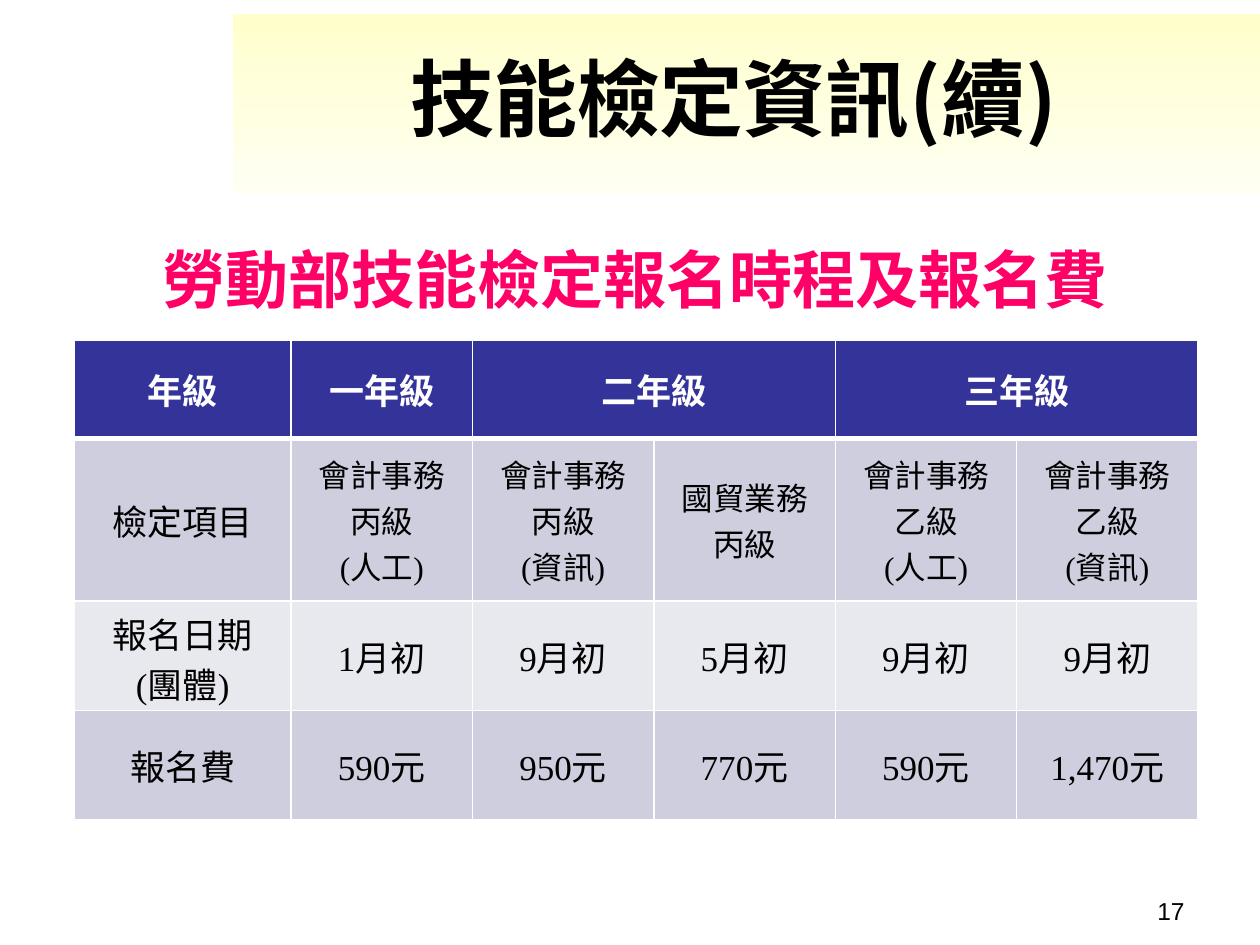
from lxml.etree import SubElement
from pptx import Presentation
from pptx.dml.color import RGBColor
from pptx.enum.shapes import MSO_SHAPE
from pptx.enum.text import MSO_ANCHOR, PP_ALIGN
from pptx.oxml.ns import qn
from pptx.util import Inches, Pt

COLORS = {
    "black": "000000", "white": "FFFFFF", "pink": "FF0066",
    "band_top": "FFFFCC", "band_bottom": "FFFFF3",
    "header": "333399", "row_dark": "CECEDE", "row_light": "E8E8EF",
}
CJK, LATIN = "Noto Sans CJK SC", "Times New Roman"


def rgb(name):
    return RGBColor.from_string(COLORS[name])


class SlideBuilder:
    def __init__(self, slide):
        self.s = slide

    def run(self, p, text, size, color="black", bold=False, font=CJK, spacing=0):
        r = p.add_run()
        r.text = text
        r.font.size, r.font.bold, r.font.name = Pt(size), bold, font
        r.font.color.rgb = rgb(color)
        rPr = r.font._element
        SubElement(rPr, qn("a:ea")).set("typeface", CJK)
        if spacing:
            rPr.set("spc", str(int(spacing * 100)))

    def band(self, box):
        """Draw the gradient band behind everything else."""
        sp = self.s.shapes.add_shape(MSO_SHAPE.RECTANGLE, *map(Inches, box))
        sp.shadow.inherit = False
        sp.line.fill.background()
        sp.fill.gradient()
        sp.fill.gradient_angle = 270
        for stop, color in zip(sp.fill.gradient_stops, ("band_top", "band_bottom")):
            stop.color.rgb = rgb(color)
        self.s.shapes._spTree.insert(2, sp._element)

    def title(self, box, parts):
        """Fill the title from (text, letter spacing) parts."""
        sp = self.s.shapes.title
        sp.left, sp.top, sp.width, sp.height = map(Inches, box)
        tf = sp.text_frame
        tf.vertical_anchor = MSO_ANCHOR.MIDDLE
        p = tf.paragraphs[0]
        p.alignment = PP_ALIGN.CENTER
        for text, spacing in parts:
            self.run(p, text, 48, bold=True, spacing=spacing)

    def text(self, box, text, size, align=PP_ALIGN.CENTER, **style):
        tf = self.s.shapes.add_textbox(*map(Inches, box)).text_frame
        tf.word_wrap = True
        p = tf.paragraphs[0]
        p.alignment = align
        self.run(p, text, size, **style)

    def borders(self, cell, top=1, bottom=1):
        tcPr = cell._tc.get_or_add_tcPr()
        for side, width in (("L", 1), ("R", 1), ("T", top), ("B", bottom)):
            ln = SubElement(tcPr, qn(f"a:ln{side}"), w=str(Pt(width)))
            fill = SubElement(ln, qn("a:solidFill"))
            SubElement(fill, qn("a:srgbClr"), val=COLORS["white"])

    def cell(self, cell, text, fill, size, **style):
        cell.fill.solid()
        cell.fill.fore_color.rgb = rgb(fill)
        cell.vertical_anchor = MSO_ANCHOR.MIDDLE
        tf = cell.text_frame
        for i, line in enumerate(text.split("\n") if text else []):
            p = tf.add_paragraph() if i else tf.paragraphs[0]
            p.alignment = PP_ALIGN.CENTER
            self.run(p, line, size, font=LATIN, **style)

    def table(self, box, widths, heights, rows, merges):
        """Build the schedule; merges lists the first column of each header pair."""
        table = self.s.shapes.add_table(len(rows), len(widths), *map(Inches, box)).table
        for col, width in zip(table.columns, widths):
            col.width = Inches(width)
        for row, height in zip(table.rows, heights):
            row.height = Inches(height)
        for i, row in enumerate(rows):
            fill = "header" if i == 0 else ("row_light", "row_dark")[i % 2]
            style = {"color": "white", "bold": True} if i == 0 else {}
            for j, text in enumerate(row):
                cell = table.cell(i, j)
                self.borders(cell, top=3 if i == 1 else 1, bottom=3 if i == 0 else 1)
                self.cell(cell, text, fill, 18 if i == 1 and j else 20, **style)
        for j in merges:
            table.cell(0, j).merge(table.cell(0, j + 1))


ROWS = [
    ["年級", "一年級", "二年級", "", "三年級", ""],
    ["檢定項目", "會計事務\n丙級\n(人工)", "會計事務\n丙級\n(資訊)", "國貿業務\n丙級",
     "會計事務\n乙級\n(人工)", "會計事務\n乙級\n(資訊)"],
    ["報名日期\n(團體)", "1月初", "9月初", "5月初", "9月初", "9月初"],
    ["報名費", "590元", "950元", "770元", "590元", "1,470元"],
]


def main():
    prs = Presentation()
    prs.slide_width, prs.slide_height = Inches(10), Inches(7.5)
    b = SlideBuilder(prs.slides.add_slide(prs.slide_layouts[5]))
    b.band((1.85, 0.11, 8.15, 1.43))
    b.title((1.77, 0.38, 8.11, 0.78), [("技能檢定資訊", -0.5), ("(續)", 0)])
    b.text((7.17, 7.06, 2.33, 0.39), "17", 14, PP_ALIGN.RIGHT, font="Arial")
    b.table((0.59, 2.7, 8.9, 3.81), [1.72] + [1.44] * 5,
            [0.78, 1.29, 0.87, 0.87], ROWS, merges=(2, 4))
    b.text((0.59, 1.86, 8.9, 0.71), "勞動部技能檢定報名時程及報名費", 36,
           color="pink", bold=True)
    prs.save("out.pptx")


if __name__ == "__main__":
    main()
